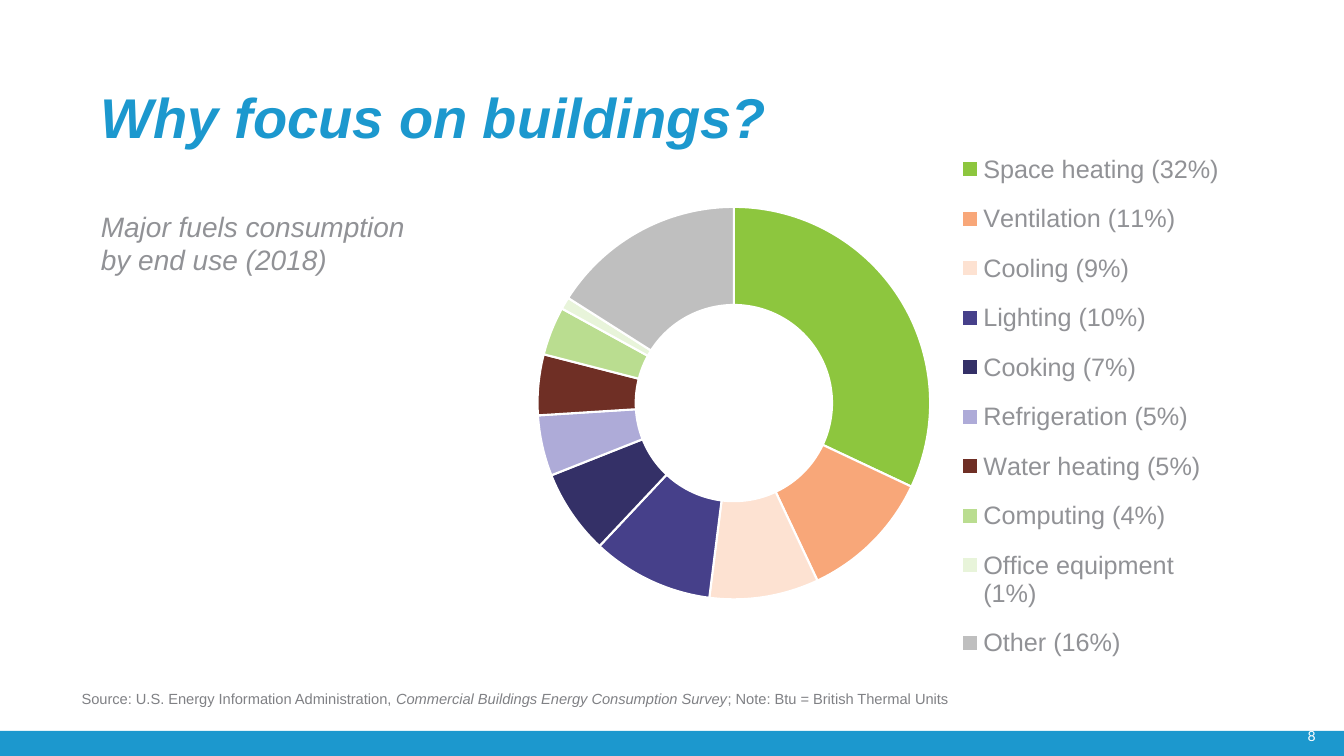
from lxml import etree
from pptx import Presentation
from pptx.chart.data import CategoryChartData
from pptx.dml.color import RGBColor
from pptx.enum.chart import XL_CHART_TYPE as ChartType, XL_LEGEND_POSITION as LegendPosition
from pptx.enum.shapes import MSO_SHAPE as Shape
from pptx.enum.text import MSO_ANCHOR as Anchor
from pptx.oxml import parse_xml
from pptx.oxml.ns import nsdecls, qn
from pptx.util import Pt

PX = 9144
BLUE = RGBColor(0x1C, 0x98, 0xCE)
GREY = RGBColor(0x91, 0x92, 0x96)
SOURCE_GREY = RGBColor(0x80, 0x81, 0x85)
CHART_GREY = RGBColor(0x57, 0x58, 0x5B)
WHITE = RGBColor(0xFF, 0xFF, 0xFF)

END_USES = [
    ("Space heating", 32, RGBColor(0x8D, 0xC6, 0x3E)),
    ("Ventilation", 11, RGBColor(0xF8, 0xA7, 0x79)),
    ("Cooling", 9, RGBColor(0xFD, 0xE2, 0xD2)),
    ("Lighting", 10, RGBColor(0x46, 0x40, 0x8A)),
    ("Cooking", 7, RGBColor(0x34, 0x30, 0x67)),
    ("Refrigeration", 5, RGBColor(0xAE, 0xAB, 0xD8)),
    ("Water heating", 5, RGBColor(0x6F, 0x2F, 0x25)),
    ("Computing", 4, RGBColor(0xBA, 0xDD, 0x90)),
    ("Office equipment", 1, RGBColor(0xE8, 0xF4, 0xDA)),
    ("Other", 16, RGBColor(0xBF, 0xBF, 0xBF)),
]

TITLE = {"name": "Arial", "size": Pt(40), "bold": True, "italic": True, "color": BLUE}
SUBTITLE = {"name": "Arial", "size": Pt(20), "italic": True, "color": GREY}
SOURCE = {"name": "Arial", "size": Pt(10.5), "color": SOURCE_GREY}
SURVEY = {**SOURCE, "italic": True}
NUMBER = {"name": "Lato", "size": Pt(10), "color": WHITE}
CHART_TEXT = {"name": "Arial", "size": Pt(10), "color": CHART_GREY}
LEGEND_TEXT = {"name": "Arial", "size": Pt(18), "color": GREY}


def emu(box):
    return [length * PX for length in box]


def set_font(font, style):
    for key, value in style.items():
        if key == "color":
            font.color.rgb = value
        else:
            setattr(font, key, value)


def add_text(page, box, spans, wrap=True):
    frame = page.shapes.add_textbox(*emu(box)).text_frame
    frame.word_wrap = wrap
    frame.vertical_anchor = Anchor.MIDDLE
    for side in ("left", "top", "right", "bottom"):
        setattr(frame, f"margin_{side}", 0)
    para = frame.paragraphs[0]
    for text, style in spans:
        for index, line in enumerate(text.split("\n")):
            if index:
                para.add_line_break()
            span = para.add_run()
            span.text = line
            set_font(span.font, style)
    return para


def add_heading(page, box):
    left, top, width, height = box
    add_text(page, (left, top, width, 64), [("Why focus on buildings?", TITLE)])
    add_text(page, (left, top + height - 64, width, 64),
             [("Major fuels consumption\nby end use (2018)", SUBTITLE)])


def set_layout(element, before, target, x, y, w, h):
    for old in element.findall(qn("c:layout")):
        element.remove(old)
    inner = '<c:layoutTarget val="inner"/>' if target else ""
    layout = parse_xml(
        f'<c:layout {nsdecls("c")}><c:manualLayout>{inner}'
        '<c:xMode val="edge"/><c:yMode val="edge"/>'
        f'<c:x val="{x}"/><c:y val="{y}"/><c:w val="{w}"/><c:h val="{h}"/>'
        '</c:manualLayout></c:layout>')
    element.find(qn(before)).addprevious(layout)


def add_doughnut(page, box):
    data = CategoryChartData()
    data.categories = [f"{name} ({share}%)" for name, share, color in END_USES]
    data.add_series("Series 1", [share for name, share, color in END_USES])
    chart = page.shapes.add_chart(ChartType.DOUGHNUT, *emu(box), data).chart
    chart.has_title = False
    set_font(chart.font, CHART_TEXT)

    chart.has_legend = True
    chart.legend.position = LegendPosition.RIGHT
    chart.legend.include_in_layout = False
    set_font(chart.legend.font, LEGEND_TEXT)

    plot = chart.plots[0]
    plot.vary_by_categories = True
    for index, (name, share, color) in enumerate(END_USES):
        slice_format = plot.series[0].points[index].format
        slice_format.fill.solid()
        slice_format.fill.fore_color.rgb = color
        slice_format.line.color.rgb = WHITE
        slice_format.line.width = Pt(1.5)

    area = chart.element.find(".//" + qn("c:plotArea"))
    ring = area.find(qn("c:doughnutChart"))
    hole = ring.find(qn("c:holeSize"))
    if hole is None:
        hole = etree.SubElement(ring, qn("c:holeSize"))
    hole.set("val", "40")
    set_layout(area, "c:doughnutChart", True, 0.02, 0.21, 0.55, 0.65)
    legend = chart.element.find(".//" + qn("c:legend"))
    set_layout(legend, "c:overlay", False, 0.61, 0.09, 0.37, 0.9)


def add_source(page, box):
    add_text(page, box, [
        ("Source: U.S. Energy Information Administration, ", SOURCE),
        ("Commercial Buildings Energy Consumption Survey", SURVEY),
        ("; Note: Btu = British Thermal Units", SOURCE),
    ], wrap=False)


def add_footer(page, box):
    left, top, width, height = box
    bar = page.shapes.add_shape(Shape.RECTANGLE, *emu(box))
    bar.shadow.inherit = False
    bar.fill.solid()
    bar.fill.fore_color.rgb = BLUE
    bar.line.fill.background()
    add_text(page, (left + width - 36, top - 3, 36, 17), [("8", NUMBER)])


def main():
    deck = Presentation()
    deck.slide_width, deck.slide_height = 1333 * PX, 750 * PX
    page = deck.slides.add_slide(deck.slide_layouts[6])
    add_footer(page, (0, 725, 1333, 25))
    add_heading(page, (100, 83, 730, 190))
    add_source(page, (81, 684, 876, 18))
    add_doughnut(page, (519, 79, 708, 600))
    deck.save("out.pptx")


if __name__ == "__main__":
    main()
